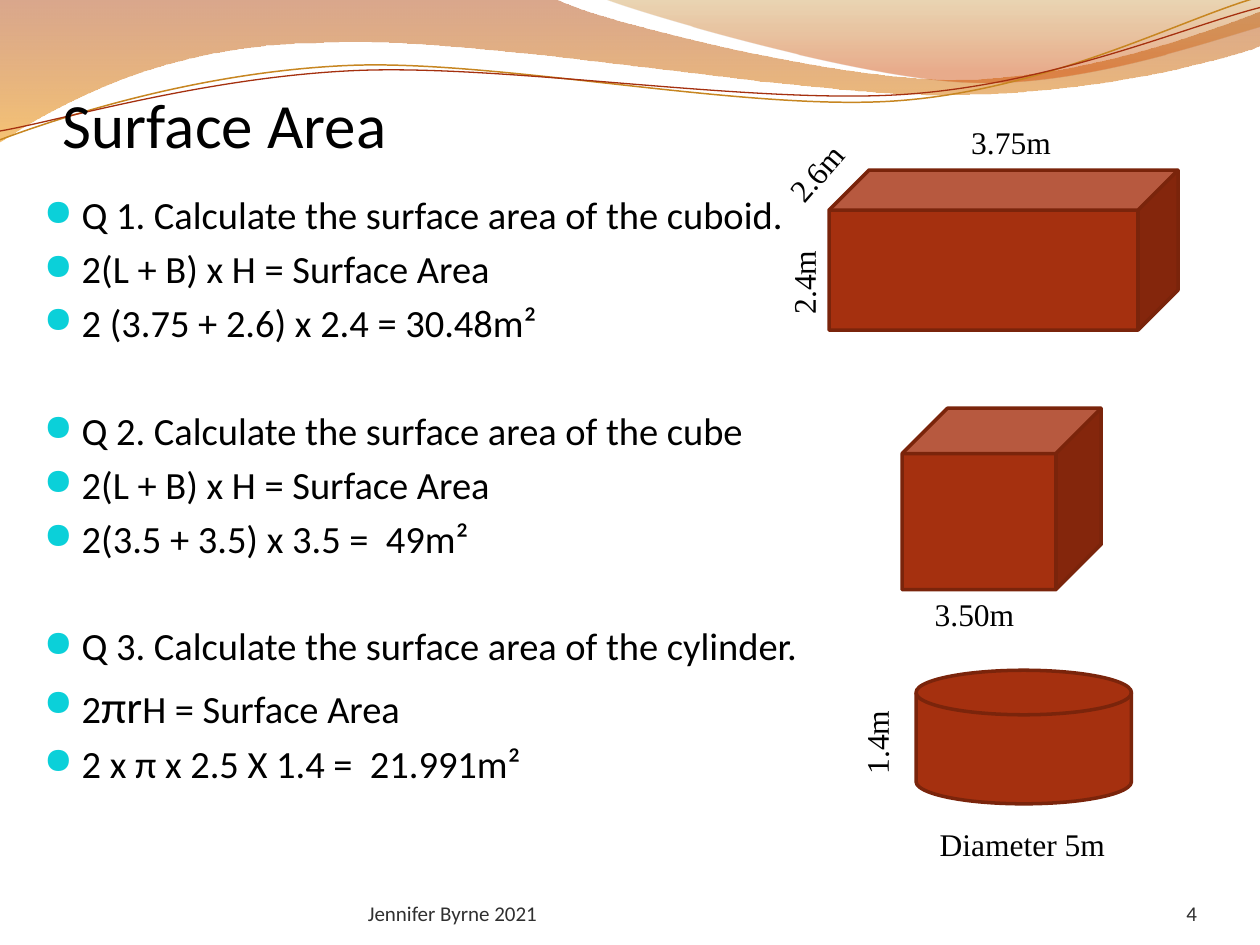
from lxml import etree
from pptx import Presentation
from pptx.dml.color import RGBColor
from pptx.enum.shapes import MSO_SHAPE
from pptx.enum.text import MSO_ANCHOR, MSO_AUTO_SIZE, PP_ALIGN
from pptx.oxml.ns import qn
from pptx.util import Inches, Pt

CUBE = MSO_SHAPE.CUBE
CYLINDER = MSO_SHAPE.FLOWCHART_MAGNETIC_DISK
TOP, BOTTOM = MSO_ANCHOR.TOP, MSO_ANCHOR.BOTTOM
LEFT, RIGHT = PP_ALIGN.LEFT, PP_ALIGN.RIGHT
GROW = MSO_AUTO_SIZE.SHAPE_TO_FIT_TEXT
SANS, SERIF = "Calibri", "Times New Roman"
BLACK, GREY, RED, DARK_RED = "000000", "303030", "A5300F", "7A240B"
GOLD, CYAN = "C78621", "0BD0D9"

LEFT_WAVE = [
    (0, -0.01), (4.4, -0.01),
    (4.76, 0.17, 6.64, 0.63, 7.58, 0.63), (8.53, 0.63, 9.58, 0.26, 10, 0.09),
    (10.01, 0.36),
    (9.83, 0.44, 8.7, 0.76, 7.46, 0.75), (6.22, 0.75, 3.82, 0.28, 2.57, 0.34),
    (1.29, 0.35, 0.46, 0.83, -0.01, 1.13),
]
RIGHT_WAVE = [
    (4.79, -0.01),
    (5.09, 0.11, 6.82, 0.62, 7.69, 0.65), (8.56, 0.69, 9.61, 0.32, 10, 0.21),
    (10, 0),
]
GOLD_WAVE = [
    (0, 1.11),
    (0.48, 0.93, 1.58, 0.57, 2.77, 0.52), (3.95, 0.47, 5.93, 0.89, 7.13, 0.8),
    (8.33, 0.71, 9.38, 0.15, 9.98, -0.02),
]
RED_WAVE = [
    (0, 1.04),
    (0.47, 0.96, 1.64, 0.61, 2.83, 0.56), (4.03, 0.51, 5.97, 0.83, 7.17, 0.75),
    (8.36, 0.67, 9.41, 0.21, 10, 0.06),
]
QUESTIONS = [
    ["Q 1. Calculate the surface area of the cuboid.",
     "2(L + B) x H = Surface Area",
     "2 (3.75 + 2.6) x 2.4 = 30.48m²"],
    ["Q 2. Calculate the surface area of the cube",
     "2(L + B) x H = Surface Area",
     "2(3.5 + 3.5) x 3.5 =  49m²"],
    ["Q 3. Calculate the surface area of the cylinder.",
     [("2", 22), ("πr", 26), ("H = Surface Area", 22)],
     "2 x π x 2.5 X 1.4 =  21.991m²"],
]
SOLIDS = [
    (CUBE, 6.58, 1.35, 2.77, 1.27),
    (CUBE, 7.16, 3.24, 1.58, 1.44),
    (CYLINDER, 7.27, 5.32, 1.71, 1.06),
]
MEASURES = [
    ("3.75m", 7.61, 0.93, 0.84, 0, False),
    ("2.4m", 6.02, 2.04, 0.71, 270, False),
    ("2.6m", 6.07, 1.05, 1.02, 311, True),
    ("3.50m", 7.32, 4.67, 0.84, 0, False),
    ("Diameter 5m", 7.36, 6.5, 1.53, 0, False),
    ("1.4m", 6.6, 5.69, 0.71, 270, True),
]


def rgb(color):
    return RGBColor.from_string(color)


def add_run(p, text, size=22, font=SANS, color=BLACK):
    r = p.add_run()
    r.text = text
    r.font.size = Pt(size)
    r.font.name = font
    r.font.color.rgb = rgb(color)


def add_box(s, x, y, w, h, insets=(0.1, 0.05, 0.1, 0.05), anchor=TOP, wrap=True):
    sp = s.shapes.add_textbox(Inches(x), Inches(y), Inches(w), Inches(h))
    tf = sp.text_frame
    tf.word_wrap = wrap
    tf.vertical_anchor = anchor
    tf.margin_left, tf.margin_top, tf.margin_right, tf.margin_bottom = map(Inches, insets)
    return sp


def add_text(s, text, x, y, w, h, align=LEFT, rotation=0, grow=False,
             insets=(0, 0, 0, 0), anchor=BOTTOM, wrap=True, **font):
    sp = add_box(s, x, y, w, h, insets, anchor, wrap)
    sp.rotation = rotation
    if grow:
        sp.text_frame.auto_size = GROW
    p = sp.text_frame.paragraphs[0]
    p.alignment = align
    add_run(p, text, **font)


def add_bullet(p, starts_group):
    pPr = p._p.get_or_add_pPr()
    pPr.set("marL", str(Inches(0.3)))
    pPr.set("indent", str(Inches(-0.3)))
    if starts_group:
        p.space_before = Pt(35.2)
    else:
        before = etree.SubElement(pPr, qn("a:spcBef"))
        etree.SubElement(before, qn("a:spcPct"), val="20000")
    clr = etree.SubElement(pPr, qn("a:buClr"))
    etree.SubElement(clr, qn("a:srgbClr"), val=CYAN)
    etree.SubElement(pPr, qn("a:buSzPct"), val="95000")
    etree.SubElement(pPr, qn("a:buFont"), typeface="OpenSymbol")
    etree.SubElement(pPr, qn("a:buChar"), char="●")


def add_questions(s):
    tf = add_box(s, 0.25, 1.47, 9.25, 5.46).text_frame
    for q, lines in enumerate(QUESTIONS):
        for i, line in enumerate(lines):
            p = tf.add_paragraph() if q or i else tf.paragraphs[0]
            add_bullet(p, starts_group=q > 0 and i == 0)
            for text, size in [(line, 22)] if isinstance(line, str) else line:
                add_run(p, text, size)


def add_outline(s, segments, close):
    points = [(Inches(seg[i]), Inches(seg[i + 1]))
              for seg in segments for i in range(0, len(seg), 2)]
    builder = s.shapes.build_freeform(*points[0])
    builder.add_line_segments(points[1:], close=False)
    sp = builder.convert_to_shape()
    sp.shadow.inherit = False
    outline = next(sp._element.iter(qn("a:moveTo"))).getparent()
    lines = iter(outline.findall(qn("a:lnTo")))
    for seg in segments[1:]:
        steps = [next(lines) for _ in range(len(seg) // 2)]
        if len(steps) == 3:
            curve = etree.SubElement(outline, qn("a:cubicBezTo"))
            outline.replace(steps[0], curve)
            for step in steps:
                curve.append(step[0])
            for step in steps[1:]:
                outline.remove(step)
    if close:
        etree.SubElement(outline, qn("a:close"))
    return sp


def add_wave(s, segments, stops):
    sp = add_outline(s, segments, True)
    sp.line.fill.background()
    sp.fill.gradient()
    sp.fill.gradient_angle = 270
    for stop, (position, color, _) in zip(sp.fill.gradient_stops, stops):
        stop.position = position
        stop.color.rgb = rgb(color)
    for clr, (_, _, opacity) in zip(sp._element.spPr.iter(qn("a:srgbClr")), stops):
        etree.SubElement(clr, qn("a:alpha"), val=str(opacity * 1000))


def set_line(sp, color, width):
    sp.line.color.rgb = rgb(color)
    sp.line.width = Pt(width)


def add_wave_line(s, segments, color, width):
    sp = add_outline(s, segments, False)
    sp.fill.background()
    set_line(sp, color, width)


def add_solid(s, kind, x, y, w, h):
    sp = s.shapes.add_shape(kind, Inches(x), Inches(y), Inches(w), Inches(h))
    sp.shadow.inherit = False
    sp.fill.solid()
    sp.fill.fore_color.rgb = rgb(RED)
    set_line(sp, DARK_RED, 2)


def main():
    prs = Presentation()
    prs.slide_width, prs.slide_height = Inches(10), Inches(7.5)
    s = prs.slides.add_slide(prs.slide_layouts[6])
    add_wave(s, LEFT_WAVE, [(0, "AC3D02", 45), (1, "EE9100", 55)])
    add_wave(s, RIGHT_WAVE, [(0, "BB7507", 30), (0.8, "CF4800", 45)])
    add_wave_line(s, GOLD_WAVE, GOLD, 0.85)
    add_wave_line(s, RED_WAVE, RED, 0.75)
    add_questions(s)
    add_text(s, "Jennifer Byrne 2021", 2.92, 6.95, 3.67, 0.4, size=12, color=GREY)
    add_text(s, "4", 8.67, 6.95, 0.83, 0.4, align=RIGHT, size=12, color=GREY)
    add_text(s, "Surface Area", 0.5, 0.58, 9, 0.7, insets=(0, 0.05, 0, 0), size=36)
    for solid in SOLIDS:
        add_solid(s, *solid)
    for text, x, y, w, rotation, wrap in MEASURES:
        add_text(s, text, x, y, w, 0.4, rotation=rotation, grow=True, anchor=TOP,
                 insets=(0.1, 0.05, 0.1, 0.05), wrap=wrap, size=18, font=SERIF)
    prs.save("out.pptx")


if __name__ == "__main__":
    main()
